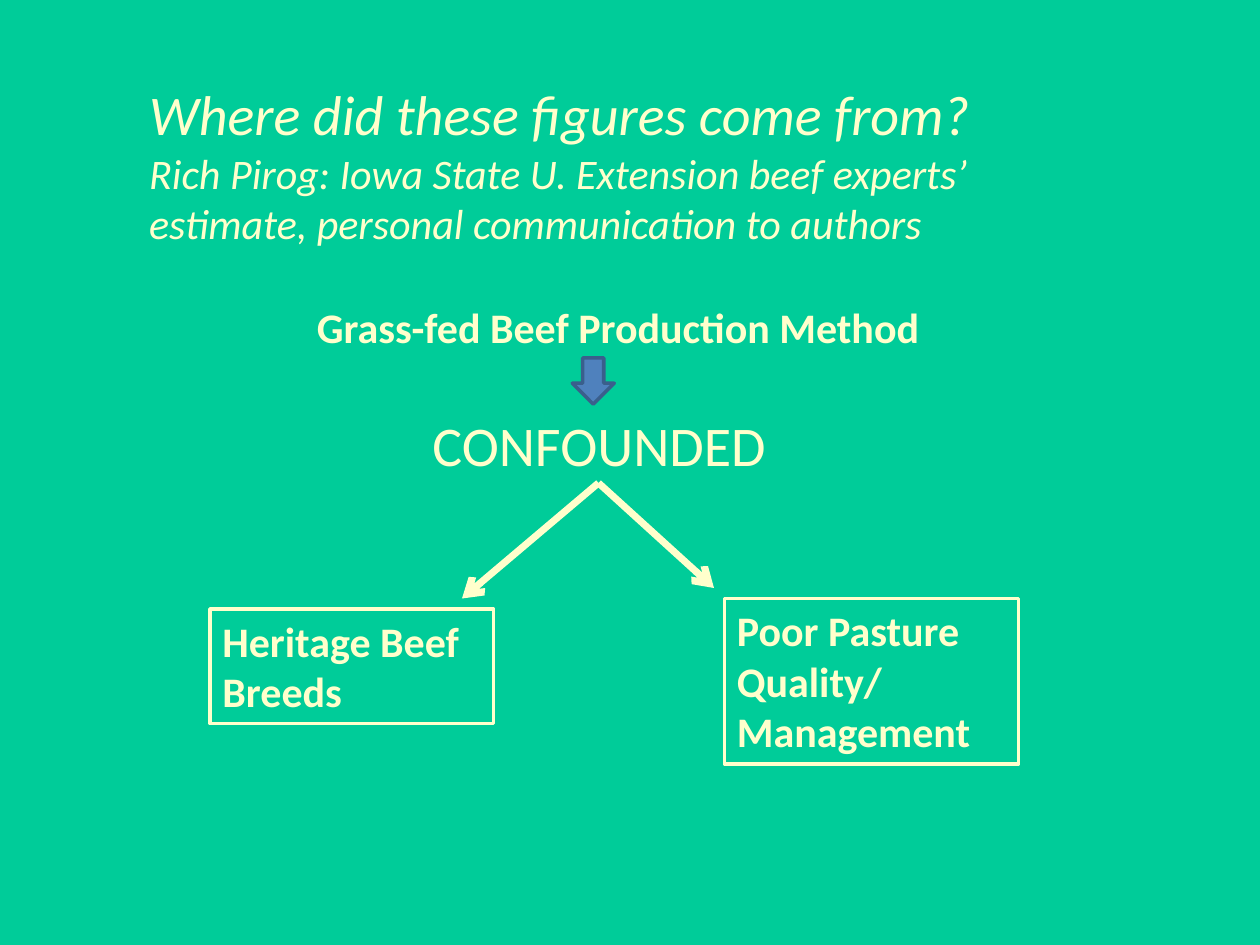
import pptx
import pptx.dml.color
import pptx.enum.shapes
import pptx.enum.text
import pptx.oxml.ns
import pptx.util
from lxml import etree

Pt = pptx.util.Pt
RGBColor = pptx.dml.color.RGBColor
Shape = pptx.enum.shapes.MSO_SHAPE
Text = pptx.enum.text

GREEN = RGBColor(0x00, 0xCC, 0x99)
CREAM = RGBColor(0xFF, 0xFF, 0xCC)
BLUE = RGBColor(0x4F, 0x81, 0xBD)
NAVY = RGBColor(0x3A, 0x5F, 0x8C)


def write(frame, lines, bold=False, italic=False):
    frame.word_wrap = True
    frame.auto_size = Text.MSO_AUTO_SIZE.NONE
    frame.vertical_anchor = Text.MSO_ANCHOR.TOP
    for i, (line, size) in enumerate(lines):
        para = frame.paragraphs[0] if i == 0 else frame.add_paragraph()
        para.text = line
        para.alignment = Text.PP_ALIGN.LEFT
        font = para.font
        font.name = "Calibri"
        font.size = Pt(size)
        font.bold = bold
        font.italic = italic
        font.color.rgb = CREAM


def add_title(slide, left, top, width, height, lines):
    title = slide.shapes.title
    title.left, title.top = Pt(left), Pt(top)
    title.width, title.height = Pt(width), Pt(height)
    write(title.text_frame, lines, italic=True)


def add_label(slide, left, top, width, height, text, size, bold=False):
    label = slide.shapes.add_textbox(Pt(left), Pt(top), Pt(width), Pt(height))
    write(label.text_frame, [(text, size)], bold)
    return label


def add_box(slide, left, top, width, height, text):
    box = add_label(slide, left, top, width, height, text, 24, True)
    box.line.color.rgb = CREAM
    box.line.width = Pt(2)


def add_block(slide, left, top, width, height):
    block = slide.shapes.add_shape(
        Shape.DOWN_ARROW, Pt(left), Pt(top), Pt(width), Pt(height))
    block.shadow.inherit = False
    block.fill.solid()
    block.fill.fore_color.rgb = BLUE
    block.line.color.rgb = NAVY
    block.line.width = Pt(2)


def add_arrow(slide, start, end):
    arrow = slide.shapes.add_connector(
        pptx.enum.shapes.MSO_CONNECTOR.STRAIGHT, *map(Pt, start + end))
    arrow.line.color.rgb = CREAM
    arrow.line.width = Pt(4)
    qn = pptx.oxml.ns.qn
    props = arrow.element.spPr
    etree.SubElement(props.find(qn("a:ln")), qn("a:tailEnd"), type="arrow")
    etree.SubElement(props, qn("a:effectLst"))


def main():
    deck = pptx.Presentation()
    deck.slide_width, deck.slide_height = Pt(720), Pt(540)
    slide = deck.slides.add_slide(deck.slide_layouts[5])
    fill = slide.background.fill
    fill.solid()
    fill.fore_color.rgb = GREEN

    add_title(slide, 78, 42, 528, 104, [
        ("Where did these figures come from?", 32),
        ("Rich Pirog: Iowa State U. Extension beef experts’ estimate, "
         "personal communication to authors", 24)])
    add_label(slide, 174, 168.5, 360, 36,
              "Grass-fed Beef Production Method", 24, True)
    add_label(slide, 240, 231, 228, 46, "CONFOUNDED", 32)
    add_box(slide, 120, 348, 162, 65.5, "Heritage Beef Breeds")
    add_box(slide, 414, 342, 168, 94.5, "Poor Pasture Quality/\nManagement")
    add_block(slide, 327, 204.5, 24, 26.5)
    for end in (264, 342), (408, 336):
        add_arrow(slide, (342, 276), end)
    deck.save("out.pptx")


if __name__ == "__main__":
    main()
